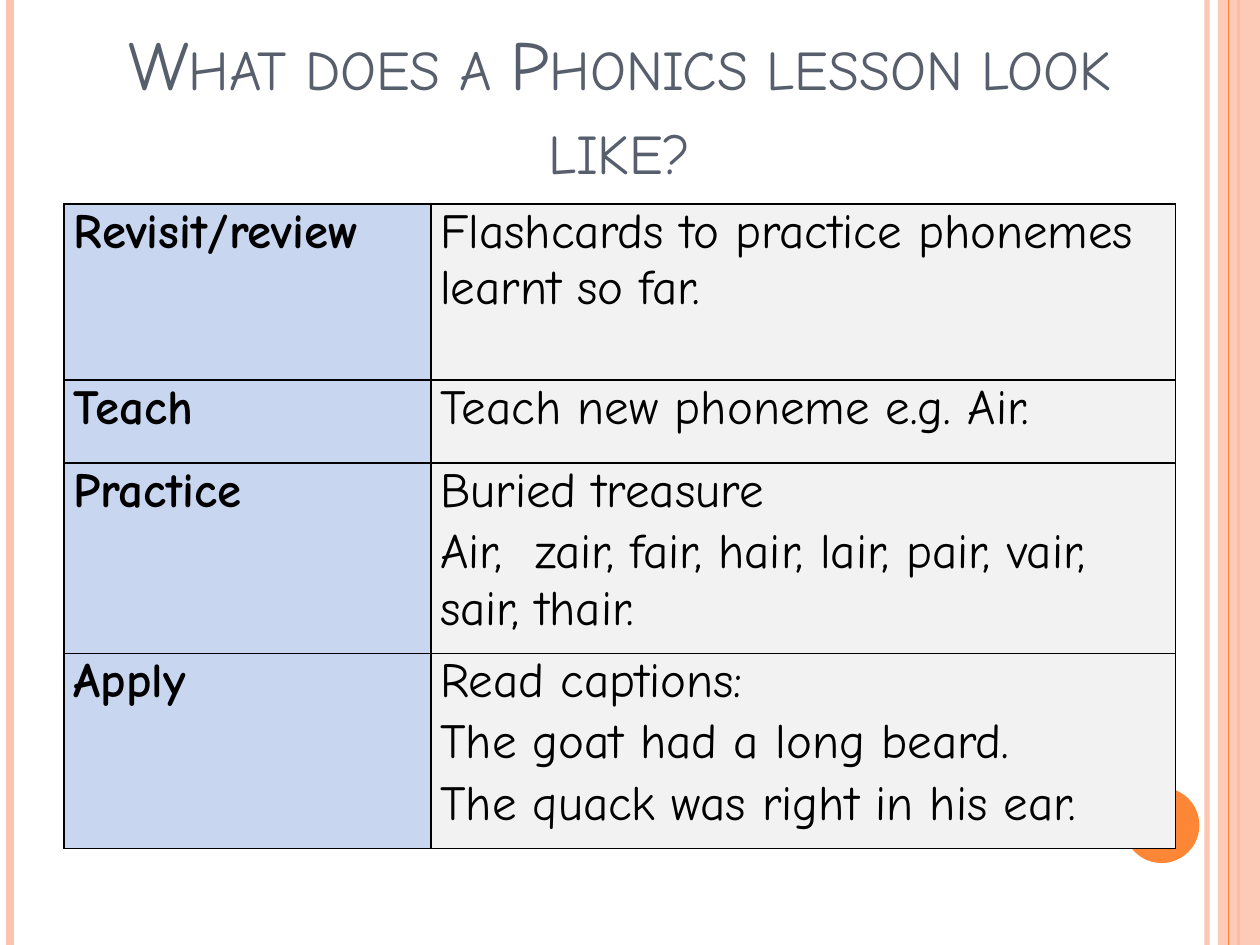
from lxml import etree
from pptx import Presentation
from pptx.dml.color import RGBColor
from pptx.enum import shapes, text
from pptx.oxml import ns
from pptx.util import Pt

TITLE = "What does a Phonics lesson look like?"
LESSON = [
    ("Revisit/review", ["Flashcards to practice phonemes learnt so far."]),
    ("Teach", ["Teach new phoneme e.g. Air."]),
    ("Practice", ["Buried treasure",
                  "Air,  zair, fair, hair, lair, pair, vair, sair, thair."]),
    ("Apply", ["Read captions:", "The goat had a long beard.",
               "The quack was right in his ear."]),
]
THEME = {
    "font": "Comic Neue", "title_size": 40, "body_size": 28,
    "title": "575F6D", "ink": "000000", "stage": "C8D6F0", "activity": "F2F2F2",
    "peach": "FEC3AE", "orange": "FE8637",
}
WIDTH, HEIGHT = 720, 540
COLUMNS = [209.5, 425.5]
ROWS = [100.6, 47.5, 108.7, 111.6]
TABLE_LEFT, TABLE_TOP = 36.7, 116.6
# x, colour, line width, opacity in percent
STRIPES_BEHIND = [(689.8, "peach", 3, 93), (5.8, "peach", 4.5, 100),
                  (707.8, "orange", 1.5, 100)]
STRIPES_FRONT = [(702, "orange", 0.75, 100)]
BAND = (696, 0, 24, HEIGHT)
DOT = (642.2, 450, 43.2, 43.2)


def color(name):
    return RGBColor.from_string(THEME[name])


def child(parent, tag, **attributes):
    return etree.SubElement(parent, ns.qn(tag), attributes)


def set_opacity(element, percent):
    if percent < 100:
        for rgb in element.iter(ns.qn("a:srgbClr")):
            child(rgb, "a:alpha", val=str(percent * 1000))


def add_stripe(page, x, name, width, opacity):
    stripe = page.shapes.add_connector(
        shapes.MSO_CONNECTOR.STRAIGHT, Pt(x), Pt(0), Pt(x), Pt(HEIGHT))
    stripe.line.color.rgb = color(name)
    stripe.line.width = Pt(width)
    properties = stripe.element.spPr
    set_opacity(properties, opacity)
    child(properties, "a:effectLst")


def add_solid(page, kind, bounds, name, opacity=100):
    solid = page.shapes.add_shape(kind, *map(Pt, bounds))
    solid.shadow.inherit = False
    solid.fill.solid()
    solid.fill.fore_color.rgb = color(name)
    solid.line.fill.background()
    set_opacity(solid.element.spPr, opacity)


def format_span(span, size, name, bold=False):
    values = {"name": THEME["font"], "size": Pt(THEME[size]), "bold": bold}
    for key, value in values.items():
        setattr(span.font, key, value)
    span.font.color.rgb = color(name)


def add_decoration(page):
    for stripe in STRIPES_BEHIND:
        add_stripe(page, *stripe)
    add_solid(page, shapes.MSO_SHAPE.RECTANGLE, BAND, "peach", 87)
    for stripe in STRIPES_FRONT:
        add_stripe(page, *stripe)
    add_solid(page, shapes.MSO_SHAPE.OVAL, DOT, "orange")


def fill_title(box):
    bounds = {"left": 36, "top": 21.6, "width": 636, "height": 90}
    for key, value in bounds.items():
        setattr(box, key, Pt(value))
    frame = box.text_frame
    frame.auto_size = text.MSO_AUTO_SIZE.NONE
    frame.word_wrap = True
    frame.vertical_anchor = text.MSO_ANCHOR.BOTTOM
    para = frame.paragraphs[0]
    para.alignment = text.PP_ALIGN.CENTER
    span = para.add_run()
    span.text = TITLE
    format_span(span, "title_size", "title")
    span.font._element.set("cap", "small")


def add_borders(cell):
    properties = cell._tc.get_or_add_tcPr()
    for position, side in enumerate(("a:lnL", "a:lnR", "a:lnT", "a:lnB")):
        border = child(properties, side, w=str(Pt(1)))
        child(child(border, "a:solidFill"), "a:srgbClr", val=THEME["ink"])
        properties.insert(position, border)


def fill_cell(cell, lines, fill, bold):
    margins = {"margin_left": 5.4, "margin_right": 5.4,
               "margin_top": 0, "margin_bottom": 0}
    for key, value in margins.items():
        setattr(cell, key, Pt(value))
    cell.fill.solid()
    cell.fill.fore_color.rgb = color(fill)
    add_borders(cell)
    frame = cell.text_frame
    for index, line in enumerate(lines):
        para = frame.add_paragraph() if index else frame.paragraphs[0]
        para.space_before = Pt(3)
        span = para.add_run()
        span.text = line
        format_span(span, "body_size", "ink", bold)


def add_lesson_table(page):
    table = page.shapes.add_table(
        len(ROWS), len(COLUMNS), Pt(TABLE_LEFT), Pt(TABLE_TOP),
        Pt(sum(COLUMNS)), Pt(sum(ROWS))).table
    table.first_row = table.horz_banding = False
    for column, width in zip(table.columns, COLUMNS):
        column.width = Pt(width)
    for index, (stage, activities) in enumerate(LESSON):
        table.rows[index].height = Pt(ROWS[index])
        fill_cell(table.cell(index, 0), [stage], "stage", True)
        fill_cell(table.cell(index, 1), activities, "activity", False)


def main():
    deck = Presentation()
    deck.slide_width, deck.slide_height = Pt(WIDTH), Pt(HEIGHT)
    page = deck.slides.add_slide(deck.slide_layouts.get_by_name("Title Only"))
    add_decoration(page)
    fill_title(page.shapes.title)
    add_lesson_table(page)
    deck.save("out.pptx")


if __name__ == "__main__":
    main()
